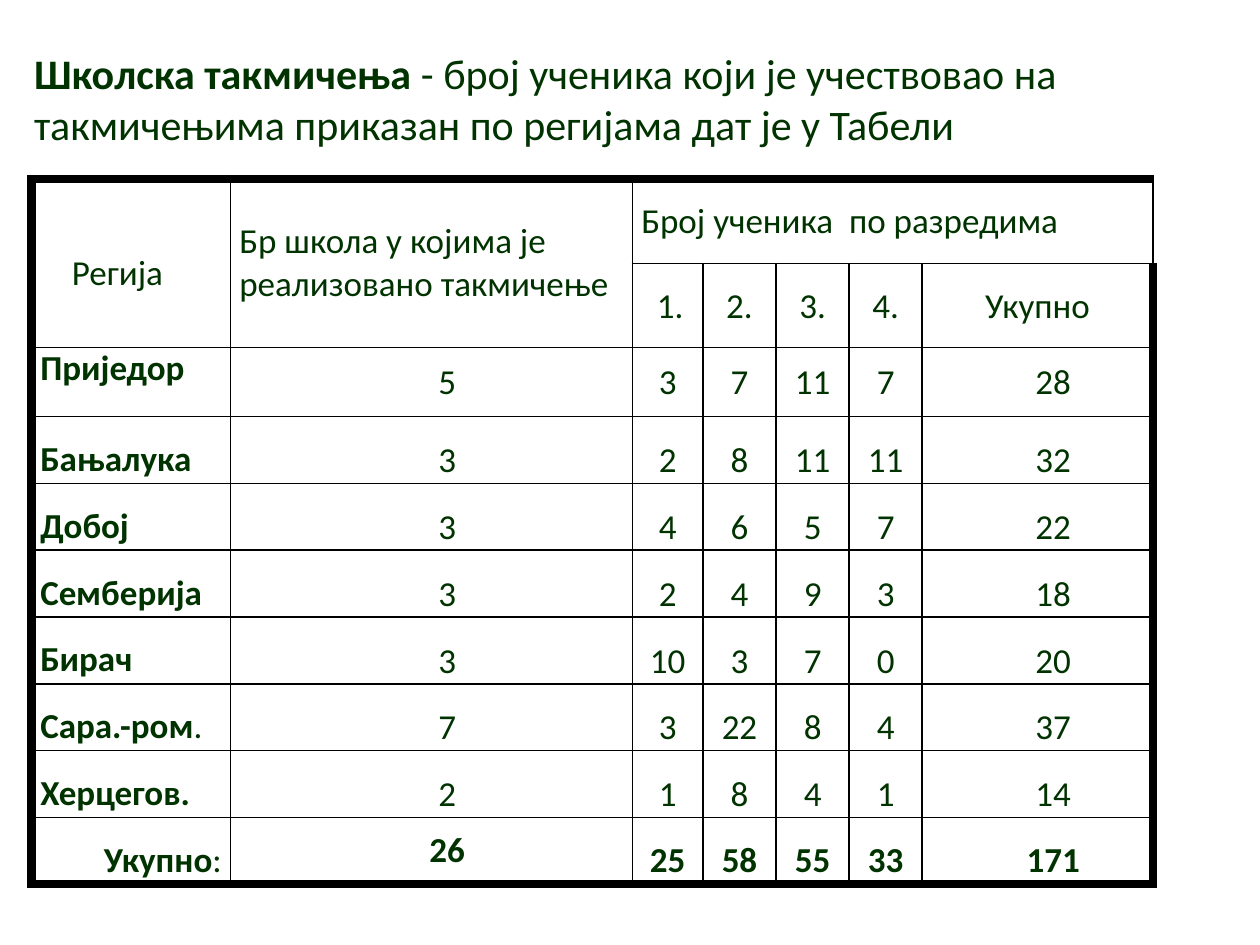
import dataclasses

import lxml.etree
import pptx
import pptx.dml.color
import pptx.enum.text
import pptx.oxml.ns
import pptx.util

Inches = pptx.util.Inches
Align = pptx.enum.text.PP_ALIGN
Anchor = pptx.enum.text.MSO_ANCHOR


@dataclasses.dataclass(frozen=True)
class Theme:
    font: str = "Calibri"
    ink: str = "003300"
    line: str = "000000"
    title_size: float = 24
    table_size: float = 20
    thin: float = 1
    thick: float = 5.25


THEME = Theme()

COLUMN_WIDTHS = [1.58, 3.19, 0.56, 0.58, 0.58, 0.58, 1.83]
ROW_HEIGHTS = [0.67, 0.66, 0.55] + [0.53] * 7

# Each indent is the left margin and the first-line offset
NO_INDENT = (0, 0)
LIST_INDENT = (0.5, -0.25)
HANGING_INDENT = (0.49, -0.49)

GRADES = [("1.", -0.45), ("2.", -0.51), ("3.", -0.51), ("4.", -0.51), ("Укупно", -0.49)]

# Region as (text, bold) runs, label indent, line spacing, schools and pupils by grade
REGIONS = [
    ([("Приједор", True)], HANGING_INDENT, 1, [5, 3, 7, 11, 7, 28]),
    ([("Бањалука", True)], HANGING_INDENT, 1.5, [3, 2, 8, 11, 11, 32]),
    ([("Добој", True)], HANGING_INDENT, 1.5, [3, 4, 6, 5, 7, 22]),
    ([("Семберија", True)], HANGING_INDENT, 1.5, [3, 2, 4, 9, 3, 18]),
    ([("Бирач", True)], NO_INDENT, 1.5, [3, 10, 3, 7, 0, 20]),
    ([("Сара.-ром", True), (".", False)], NO_INDENT, 1.5, [7, 3, 22, 8, 4, 37]),
    ([("Херцегов.", True)], HANGING_INDENT, 1.5, [2, 1, 8, 4, 1, 14]),
]
TOTALS = [26, 25, 58, 55, 33, 171]


def add_runs(paragraph, runs, size):
    for text, bold in runs:
        run = paragraph.add_run()
        run.text = text
        run.font.name = THEME.font
        run.font.size = pptx.util.Pt(size)
        run.font.bold = bold
        run.font.color.rgb = pptx.dml.color.RGBColor.from_string(THEME.ink)


def add_title(slide, left, top, width, height):
    title = slide.shapes.title
    title.left, title.top, title.width, title.height = map(Inches, (left, top, width, height))
    frame = title.text_frame
    frame.word_wrap = True
    frame.auto_size = pptx.enum.text.MSO_AUTO_SIZE.SHAPE_TO_FIT_TEXT
    frame.vertical_anchor = Anchor.TOP
    paragraph = frame.paragraphs[0]
    paragraph.alignment = Align.LEFT
    paragraph.line_spacing = 1
    paragraph.space_before = pptx.util.Pt(0)
    add_runs(paragraph, [
        ("Школска такмичења ", True),
        ("- број ученика који је учествовао на такмичењима приказан по регијама дат је у Табели", False),
    ], THEME.title_size)


def set_borders(cell, widths):
    """Draw the left, right, top and bottom lines, which precede the fill."""
    properties = cell._tc.get_or_add_tcPr()
    for index, (side, width) in enumerate(zip("LRTB", widths)):
        line = lxml.etree.Element(pptx.oxml.ns.qn(f"a:ln{side}"), w=str(pptx.util.Pt(width)))
        fill = lxml.etree.SubElement(line, pptx.oxml.ns.qn("a:solidFill"))
        lxml.etree.SubElement(fill, pptx.oxml.ns.qn("a:srgbClr"), val=THEME.line)
        properties.insert(index, line)


def fill_cell(cell, runs, align=Align.LEFT, anchor=Anchor.TOP, indent=NO_INDENT, spacing=1.5):
    cell.vertical_anchor = anchor
    paragraph = cell.text_frame.paragraphs[0]
    paragraph.alignment = align
    paragraph.line_spacing = spacing
    margin, first_line = indent
    if margin:
        properties = paragraph._p.get_or_add_pPr()
        properties.set("marL", str(Inches(margin)))
        properties.set("indent", str(Inches(first_line)))
    add_runs(paragraph, runs, THEME.table_size)


def format_grid(table):
    last_row, last_column = len(ROW_HEIGHTS) - 1, len(COLUMN_WIDTHS) - 1
    for row in range(last_row + 1):
        for column in range(last_column + 1):
            cell = table.cell(row, column)
            cell.margin_left = cell.margin_right = Inches(0.07)
            cell.margin_top = cell.margin_bottom = 0
            cell.fill.background()
            outer = (column == 0, column == last_column, row == 0, row == last_row)
            set_borders(cell, [THEME.thick if edge else THEME.thin for edge in outer])


def fill_header(table):
    table.cell(0, 0).merge(table.cell(1, 0))
    table.cell(0, 1).merge(table.cell(1, 1))
    table.cell(0, 2).merge(table.cell(0, 6))
    fill_cell(table.cell(0, 0), [("Регија", False)], anchor=Anchor.MIDDLE, indent=LIST_INDENT)
    fill_cell(table.cell(0, 1), [("Бр школа у којима је реализовано такмичење", False)],
              anchor=Anchor.MIDDLE, spacing=1)
    fill_cell(table.cell(0, 2), [("Број ученика  по разредима", False)])
    for column, (text, first_line) in enumerate(GRADES, start=2):
        fill_cell(table.cell(1, column), [(text, False)], Align.CENTER, indent=(0.49, first_line))


def fill_numbers(table, row, values, bold, anchor, spacing, first_spacing):
    for column, value in enumerate(values, start=1):
        first = column == 1
        fill_cell(table.cell(row, column), [(str(value), bold)], Align.CENTER,
                  Anchor.MIDDLE if first else anchor,
                  LIST_INDENT if column in (1, len(values)) else NO_INDENT,
                  first_spacing if first else spacing)


def add_results_table(slide, left, top, width, height):
    shape = slide.shapes.add_table(len(ROW_HEIGHTS), len(COLUMN_WIDTHS),
                                   *map(Inches, (left, top, width, height)))
    table = shape.table
    table.first_row = table.horz_banding = False
    for column, size in zip(table.columns, COLUMN_WIDTHS):
        column.width = Inches(size * width / sum(COLUMN_WIDTHS))
    for row, size in zip(table.rows, ROW_HEIGHTS):
        row.height = Inches(size * height / sum(ROW_HEIGHTS))
    format_grid(table)
    fill_header(table)

    # One row for each region
    for row, (label, indent, spacing, values) in enumerate(REGIONS, start=2):
        fill_cell(table.cell(row, 0), label, indent=indent, spacing=spacing)
        fill_numbers(table, row, values, False, Anchor.MIDDLE, spacing, spacing)

    # Totals
    total_row = len(ROW_HEIGHTS) - 1
    fill_cell(table.cell(total_row, 0), [("Укупно", True), (":", False)], Align.RIGHT,
              indent=LIST_INDENT)
    fill_numbers(table, total_row, TOTALS, True, Anchor.TOP, 1.5, 1)


def main():
    presentation = pptx.Presentation()
    presentation.slide_width, presentation.slide_height = Inches(10), Inches(7.5)
    slide = presentation.slides.add_slide(presentation.slide_layouts[5])
    add_results_table(slide, 0.25, 1.42, 8.9, sum(ROW_HEIGHTS))
    add_title(slide, 0.17, 0.33, 9.67, 0.91)
    presentation.save("out.pptx")


if __name__ == "__main__":
    main()
